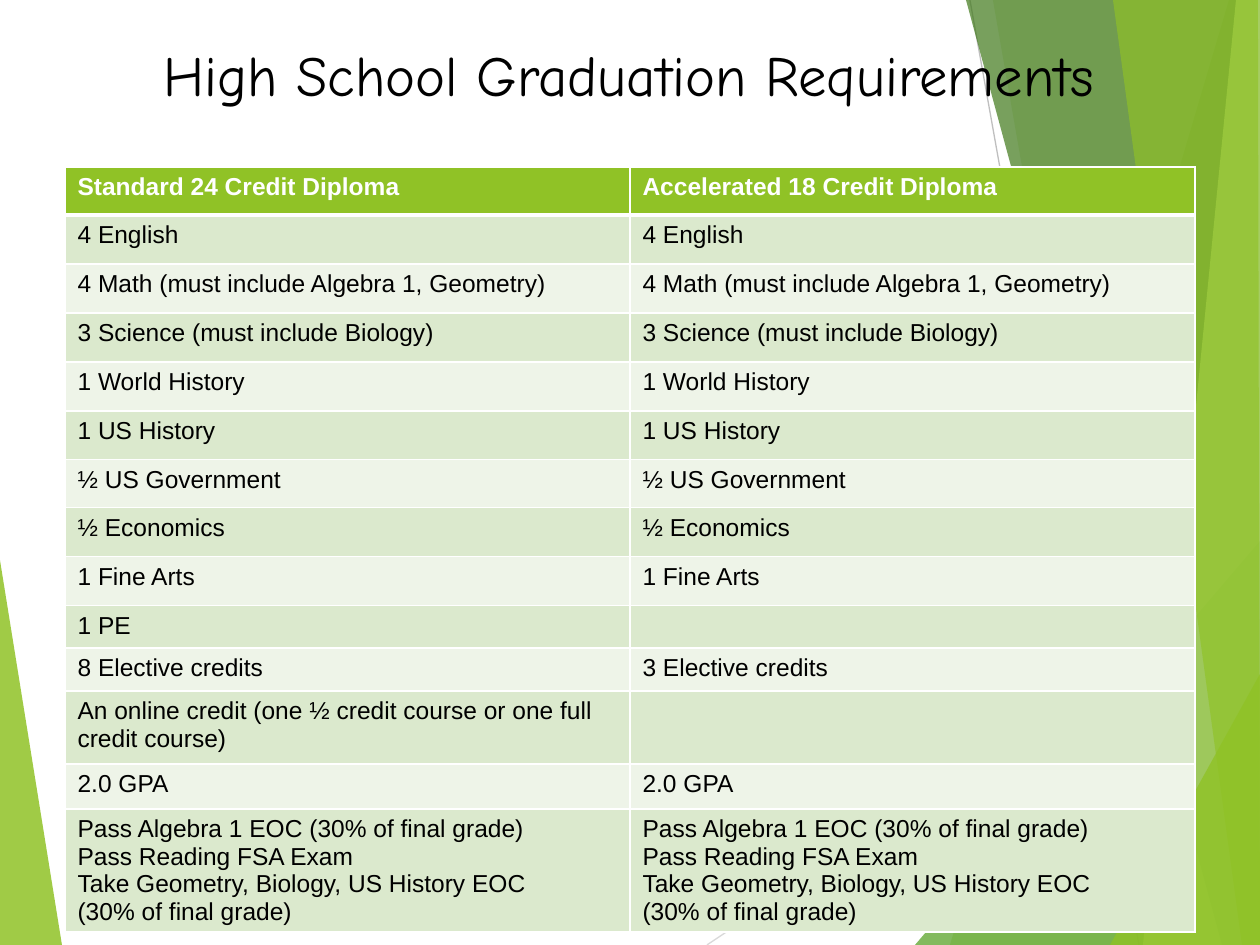
from lxml import etree
from pptx import Presentation
from pptx.dml.color import RGBColor
from pptx.enum.text import MSO_ANCHOR, PP_ALIGN
from pptx.oxml.ns import qn
from pptx.util import Pt

PX = 7257  # EMU in one px, at 126 px to the inch
WIDTH, HEIGHT = 1260, 945
TOP, CENTER = MSO_ANCHOR.TOP, PP_ALIGN.CENTER
GREEN, WHITE, BLACK = "90C226", "FFFFFF", "000000"
BANDS = ("DBE9CD", "EEF4E8")

TITLE = "High School Graduation Requirements"
HEADER = ("Standard 24 Credit Diploma", "Accelerated 18 Credit Diploma")
SHARED = [
    "4 English",
    "4 Math (must include Algebra 1, Geometry)",
    "3 Science (must include Biology)",
    "1 World History",
    "1 US History",
    "½ US Government",
    "½ Economics",
    "1 Fine Arts",
]
EXAMS = "\n".join([
    "Pass Algebra 1 EOC (30% of final grade)",
    "Pass Reading FSA Exam",
    "Take Geometry, Biology, US History EOC",
    "(30% of final grade)",
])
ROWS = [HEADER] + [(text, text) for text in SHARED] + [
    ("1 PE", ""),
    ("8 Elective credits", "3 Elective credits"),
    ("An online credit (one ½ credit course or one full credit course)", ""),
    ("2.0 GPA", "2.0 GPA"),
    (EXAMS, EXAMS),
]
ROW_HEIGHTS = [48, 49, 49, 49, 49, 49, 48, 49, 49, 40, 43, 73, 45, 123]
TABLE_LEFT, TABLE_TOP, COLUMN_WIDTH = 65, 167, 565

# Backdrop: facets as (colour, opacity %, corners), lines as (colour, start, end)
LEFT_FACET = (GREEN, 85, [(0, 560), (62, HEIGHT), (0, HEIGHT)])
LINES = [
    ("D9D9D9", (707, HEIGHT), (WIDTH, 576)),
    ("BFBFBF", (970, 0), (1139, HEIGHT)),
]
RIGHT_FACETS = [
    (GREEN, 30, [(1229, 0), (950, HEIGHT), (WIDTH, HEIGHT), (WIDTH, 0)]),
    (GREEN, 20, [(993, 0), (1158, HEIGHT), (WIDTH, HEIGHT), (WIDTH, 0)]),
    ("54A021", 72, [(915, HEIGHT), (WIDTH, 541), (WIDTH, HEIGHT)]),
    ("3F7819", 70, [(966, 0), (1222, HEIGHT), (WIDTH, HEIGHT), (WIDTH, 0)]),
    ("C0E474", 70, [(1236, 0), (1143, HEIGHT), (WIDTH, HEIGHT), (WIDTH, 0)]),
    (GREEN, 65, [(1113, 0), (1242, HEIGHT), (WIDTH, HEIGHT), (1258, 0)]),
    (GREEN, 80, [(1110, HEIGHT), (WIDTH, 674), (WIDTH, HEIGHT)]),
]


def color(value):
    return RGBColor.from_string(value)


def add_facet(slide, fill, opacity, corners):
    builder = slide.shapes.build_freeform(*corners[0], scale=PX)
    builder.add_line_segments(corners[1:], close=True)
    facet = builder.convert_to_shape()
    facet.shadow.inherit = False
    facet.line.fill.background()
    facet.fill.solid()
    facet.fill.fore_color.rgb = color(fill)
    shade = facet._element.spPr.find(".//" + qn("a:srgbClr"))
    etree.SubElement(shade, qn("a:alpha"), val=str(opacity * 1000))


def add_line(slide, stroke, start, end):
    ends = [value * PX for value in start + end]
    line = slide.shapes.add_connector(1, *ends)
    line.line.color.rgb = color(stroke)
    line.line.width = Pt(0.75)
    etree.SubElement(line._element.spPr, qn("a:effectLst"))


def style_text(span, size, font, ink, bold=False):
    span.font.size = Pt(size)
    span.font.name = font
    span.font.color.rgb = color(ink)
    span.font.bold = bold


def add_borders(cell, row):
    weights = {"L": 1, "R": 1, "T": 3 if row == 1 else 1, "B": 3 if row == 0 else 1}
    properties = cell._tc.get_or_add_tcPr()
    for side, weight in weights.items():
        border = etree.SubElement(properties, qn("a:ln" + side), w=str(Pt(weight)))
        fill = etree.SubElement(border, qn("a:solidFill"))
        etree.SubElement(fill, qn("a:srgbClr"), val=WHITE)


def fill_cell(cell, text, row):
    is_header = row == 0
    add_borders(cell, row)
    cell.fill.solid()
    cell.fill.fore_color.rgb = color(GREEN if is_header else BANDS[(row - 1) % 2])
    cell.text_frame.text = text
    for para in cell.text_frame.paragraphs:
        if not para.runs:  # keeps an empty cell from stretching its row
            para._p.get_or_add_endParaRPr().set("sz", "1400")
        for span in para.runs:
            style_text(span, 14, "Arial", WHITE if is_header else BLACK, is_header)


def add_requirements(slide):
    frame = slide.shapes.add_table(
        len(ROWS), len(HEADER), TABLE_LEFT * PX, TABLE_TOP * PX,
        COLUMN_WIDTH * len(HEADER) * PX, sum(ROW_HEIGHTS) * PX)
    table = frame.table
    for column in table.columns:
        column.width = COLUMN_WIDTH * PX
    for row, (texts, height) in enumerate(zip(ROWS, ROW_HEIGHTS)):
        table.rows[row].height = height * PX
        for column, text in enumerate(texts):
            fill_cell(table.cell(row, column), text, row)


def main():
    deck = Presentation()
    deck.slide_width, deck.slide_height = WIDTH * PX, HEIGHT * PX
    slide = deck.slides.add_slide(deck.slide_layouts[5])

    # Backdrop
    add_facet(slide, *LEFT_FACET)
    for line in LINES:
        add_line(slide, *line)
    for facet in RIGHT_FACETS:
        add_facet(slide, *facet)

    # Title, brought in front of the backdrop
    title = slide.shapes.title
    slide.shapes._spTree.append(title._element)
    title.left, title.top, title.width, title.height = (
        value * PX for value in (64, 34, 1130, 132))
    title.text_frame.text = TITLE
    title.text_frame.vertical_anchor = TOP
    para = title.text_frame.paragraphs[0]
    para.alignment = CENTER
    style_text(para.runs[0], 32.4, "Comic Neue", BLACK)

    add_requirements(slide)
    deck.save("out.pptx")


if __name__ == "__main__":
    main()
